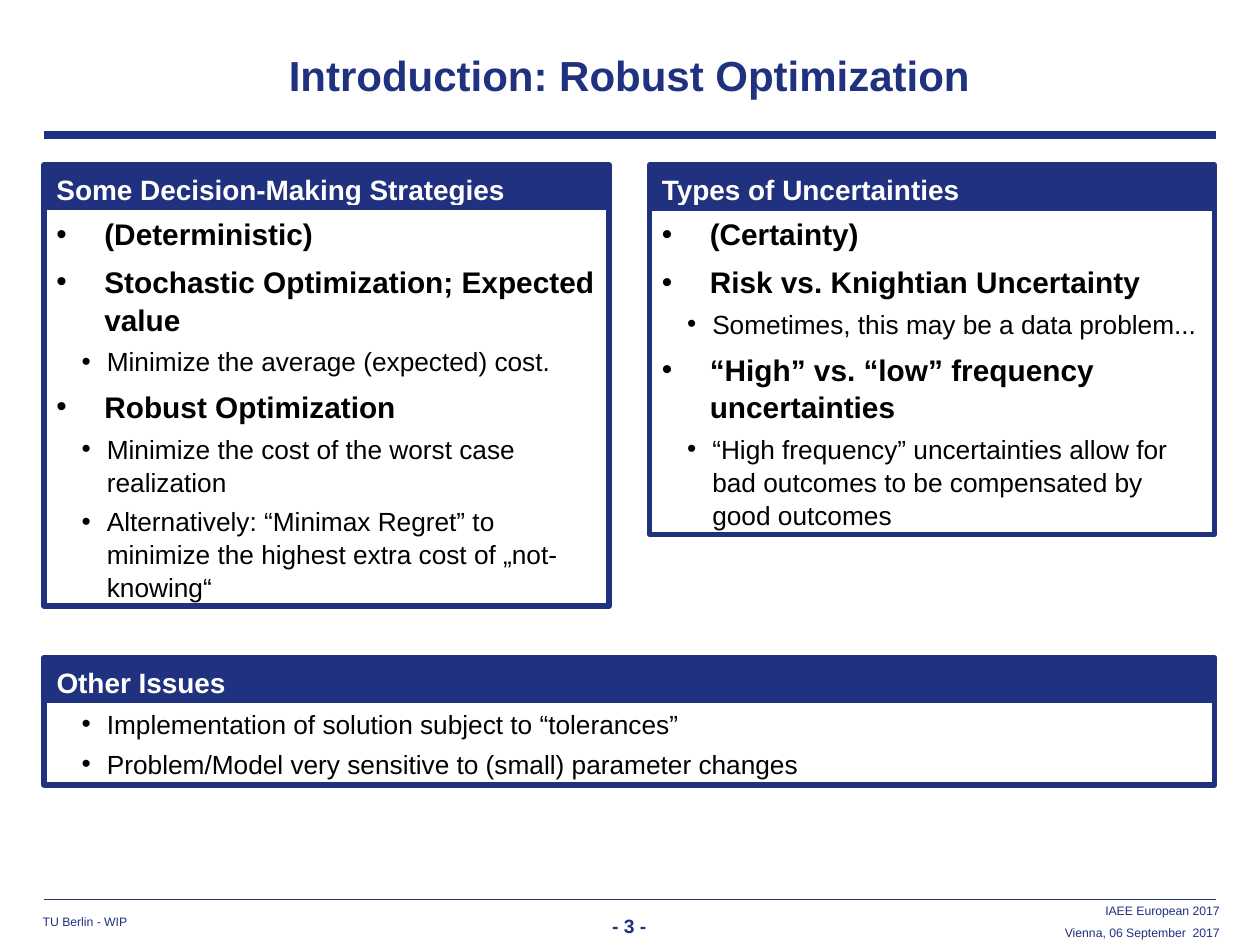
import pptx
import pptx.dml.color
import pptx.enum.shapes
import pptx.enum.text
import pptx.oxml
import pptx.oxml.ns
import pptx.util
from lxml import etree

NAVY = pptx.dml.color.RGBColor(0x1F, 0x31, 0x7F)
WHITE = pptx.dml.color.RGBColor(0xFF, 0xFF, 0xFF)
BLACK = pptx.dml.color.RGBColor(0, 0, 0)
FONT = "Arial"
ALIGN = pptx.enum.text.PP_ALIGN
ANCHOR = pptx.enum.text.MSO_ANCHOR
IN = pptx.util.Inches

WIDE, HIGH = 10, 7.5
LEFT, SPAN, GAP = 0.35, 9.29, 0.32
HALF = (SPAN - GAP) / 2
HEAD, STEP = 0.37, 0.34  # header height, and offset of the body below it

# Level: size, bold, indent, hang, share of size before
LEVELS = [(17, True, 0.38, 0.38, 0.25), (15, False, 0.4, 0.2, 0.15)]

STRATEGIES = [
    (0, "(Deterministic)"),
    (0, "Stochastic Optimization; Expected value"),
    (1, "Minimize the average (expected) cost."),
    (0, "Robust Optimization"),
    (1, "Minimize the cost of the worst case realization"),
    (1, "Alternatively: “Minimax Regret” to minimize the highest extra cost "
        "of „not-knowing“"),
]
TYPES = [
    (0, "(Certainty)"),
    (0, "Risk vs. Knightian Uncertainty"),
    (1, "Sometimes, this may be a data problem..."),
    (0, "“High” vs. “low” frequency uncertainties"),
    (1, "“High frequency” uncertainties allow for bad outcomes to be "
        "compensated by good outcomes"),
]
ISSUES = [
    (1, "Implementation of solution subject to “tolerances”"),
    (1, "Problem/Model very sensitive to (small) parameter changes"),
]


def set_frame(frame, anchor, side, edge):
    frame.word_wrap = True
    frame.vertical_anchor = anchor
    frame.margin_left = frame.margin_right = IN(side)
    frame.margin_top = frame.margin_bottom = IN(edge)


def add_para(frame, first, text, size, color, bold=False, align=ALIGN.LEFT,
             before=0.0, after=0.0):
    para = frame.paragraphs[0] if first else frame.add_paragraph()
    para.alignment = align
    para.line_spacing = 1.05
    para.space_before = pptx.util.Pt(0 if first else before * size)
    para.space_after = pptx.util.Pt(after * size)
    run = para.add_run()
    run.text = text
    font = run.font
    font.name, font.size, font.bold = FONT, pptx.util.Pt(size), bold
    font.color.rgb = color
    return para


def add_bullet(para, indent, hang):
    props = para._p.get_or_add_pPr()
    props.set("marL", str(IN(indent)))
    props.set("indent", str(-IN(hang)))
    face = etree.SubElement(props, pptx.oxml.ns.qn("a:buFont"))
    face.set("typeface", FONT)
    mark = etree.SubElement(props, pptx.oxml.ns.qn("a:buChar"))
    mark.set("char", "•")


def add_text(slide, box, lines, size, align, anchor, side, edge, bold=False):
    frame = slide.shapes.add_textbox(*map(IN, box)).text_frame
    set_frame(frame, anchor, side, edge)
    for i, line in enumerate(lines):
        add_para(frame, i == 0, line, size, NAVY, bold, align, before=0.5)


def add_rule(slide, top, weight):
    line = slide.shapes.add_connector(
        pptx.enum.shapes.MSO_CONNECTOR.STRAIGHT,
        IN(LEFT), IN(top), IN(WIDE - LEFT), IN(top))
    line.line.color.rgb = NAVY
    line.line.width = pptx.util.Pt(weight)
    etree.SubElement(line._element.spPr, pptx.oxml.ns.qn("a:effectLst"))


def add_rect(group, box, fill):
    rect = group.shapes.add_shape(
        pptx.enum.shapes.MSO_SHAPE.RECTANGLE, *map(IN, box))
    rect.shadow.inherit = False
    rect.fill.solid()
    rect.fill.fore_color.rgb = fill
    rect.line.color.rgb = NAVY
    rect.line.width = pptx.util.Pt(3)
    set_frame(rect.text_frame, ANCHOR.TOP, 0.1, 0.05)
    return rect.text_frame


def add_panel(slide, box, title, items):
    left, top, width, height = box
    group = slide.shapes.add_group_shape()
    # Header bar
    head = add_rect(group, (left, top, width, HEAD), NAVY)
    add_para(head, True, title, 16, WHITE, True, after=0.1)
    # Bulleted body
    body = add_rect(group, (left, top + STEP, width, height - STEP), WHITE)
    for i, (level, text) in enumerate(items):
        size, bold, indent, hang, before = LEVELS[level]
        para = add_para(body, i == 0, text, size, BLACK, bold,
                        before=before, after=0.1)
        para.level = level
        add_bullet(para, indent, hang)


def add_title(slide, box, text):
    left, top, width, height = box
    add_text(slide, box, [text], 24, ALIGN.CENTER, ANCHOR.MIDDLE, 0, 0.05, True)
    add_rule(slide, top + height + 0.07, 4.5)


def add_footer(slide, top):
    add_rule(slide, top, 0.75)
    add_text(slide, (WIDE / 2 - 0.67, top + 0.11, 1.33, 0.19), ["- 3 -"],
             11, ALIGN.CENTER, ANCHOR.BOTTOM, 0.1, 0, True)
    add_text(slide, (0.24, top + 0.08, 3.62, 0.19), ["TU Berlin - WIP"],
             7, ALIGN.LEFT, ANCHOR.MIDDLE, 0.1, 0.05)
    add_text(slide, (5.74, top + 0.08, 3.94, 0.18),
             ["IAEE European 2017", "Vienna, 06 September  2017"],
             7, ALIGN.RIGHT, ANCHOR.MIDDLE, 0, 0.05)


def main():
    deck = pptx.Presentation()
    deck.slide_width, deck.slide_height = IN(WIDE), IN(HIGH)
    slide = deck.slides.add_slide(deck.slide_layouts[6])
    add_title(slide, (LEFT, 0.17, SPAN, 0.83),
              "Introduction: Robust Optimization")
    # Two columns over one full-width panel
    add_panel(slide, (LEFT, 1.31, HALF, 3.5),
              "Some Decision-Making Strategies", STRATEGIES)
    add_panel(slide, (LEFT + HALF + GAP, 1.31, HALF, 2.93),
              "Types of Uncertainties", TYPES)
    add_panel(slide, (LEFT, 5.22, SPAN, 1.01), "Other Issues", ISSUES)
    add_footer(slide, 7.14)
    deck.save("out.pptx")


if __name__ == "__main__":
    main()
